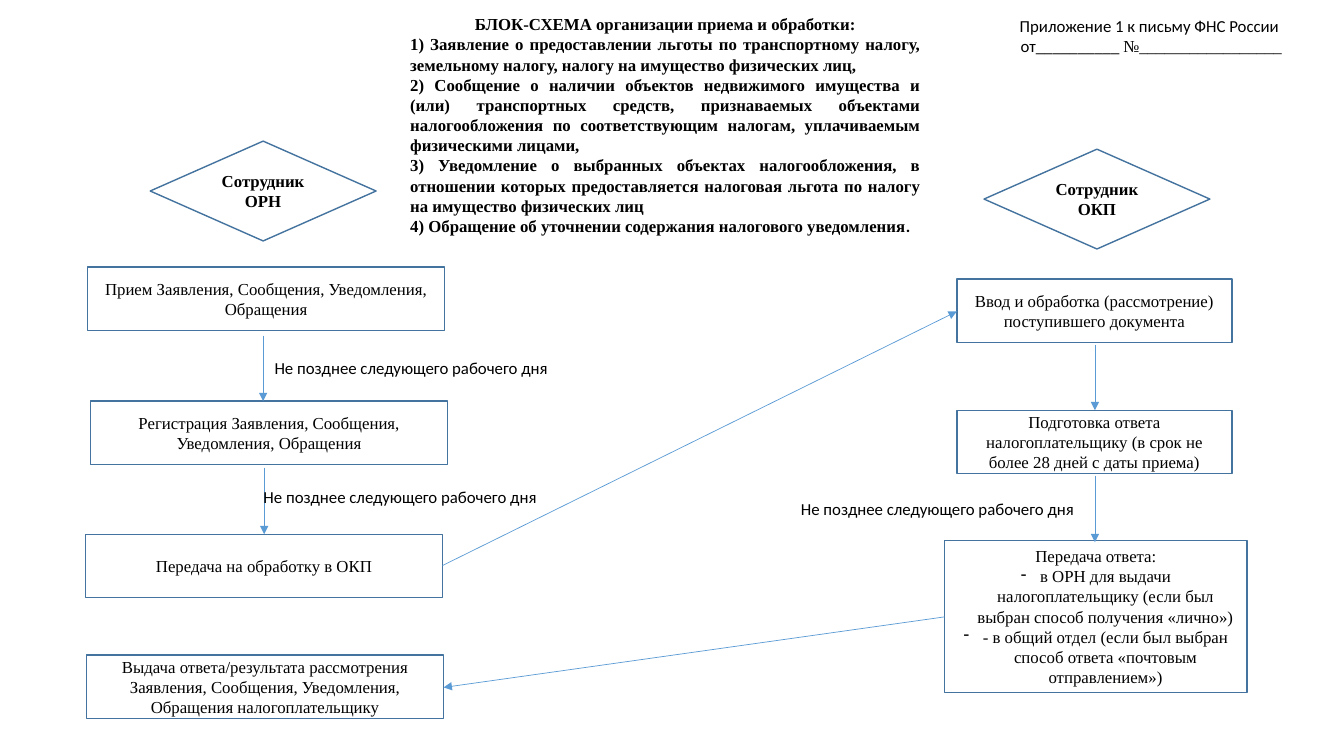
from lxml import etree
from pptx import Presentation
from pptx.dml.color import RGBColor
from pptx.enum.shapes import MSO_CONNECTOR, MSO_SHAPE
from pptx.enum.text import MSO_ANCHOR, PP_ALIGN
from pptx.oxml.ns import qn
from pptx.util import Emu, Pt

PX = 9144  # one hundredth of an inch
RECT, RHOMB = MSO_SHAPE.RECTANGLE, MSO_SHAPE.DIAMOND
STRAIGHT = MSO_CONNECTOR.STRAIGHT
MIDDLE, TOP = MSO_ANCHOR.MIDDLE, MSO_ANCHOR.TOP
CENTER, JUSTIFY = PP_ALIGN.CENTER, PP_ALIGN.JUSTIFY
SERIF, SANS = "Times New Roman", "Calibri"
INK, EDGE, ARROW, WHITE = "000000", "43739E", "5B9BD5", "FFFFFF"

STEPS = [
    ((87, 265, 354, 63), "Прием Заявления, Сообщения, Уведомления, Обращения"),
    ((90, 398, 354, 63), "Регистрация Заявления, Сообщения, Уведомления, Обращения"),
    ((85, 530, 354, 63), "Передача на обработку в ОКП"),
    ((86, 650, 354, 63), "Выдача ответа/результата рассмотрения Заявления, Сообщения, "
                         "Уведомления, Обращения налогоплательщику"),
    ((949, 277, 273, 63), "Ввод и обработка (рассмотрение) поступившего документа"),
    ((949, 407, 273, 63), "Подготовка ответа налогоплательщику "
                          "(в срок не более 28 дней с даты приема)"),
]
REPLY = [
    "Передача ответа:",
    "в ОРН для выдачи налогоплательщику (если был выбран способ получения «лично»)",
    "- в общий отдел (если был выбран способ ответа «почтовым отправлением»)",
]
ROLES = [((149, 140), "Сотрудник ОРН"), ((976, 148), "Сотрудник ОКП")]
ARROWS = [
    (261, 333, 261, 398),
    (262, 464, 262, 530),
    (439, 561, 949, 309),
    (1086, 342, 1086, 407),
    (1086, 472, 1086, 538),
    (937, 612, 440, 682),
]
TERM = "Не позднее следующего рабочего дня"
TERMS = [(188, 350), (177, 478), (710, 490)]
TITLE = [
    "БЛОК-СХЕМА организации приема и обработки:",
    "1) Заявление о предоставлении льготы по транспортному налогу, "
    "земельному налогу, налогу на имущество физических лиц, ",
    "2) Сообщение о наличии объектов недвижимого имущества и (или) "
    "транспортных средств, признаваемых объектами налогообложения по "
    "соответствующим налогам, уплачиваемым физическими лицами, ",
    "3) Уведомление о выбранных объектах налогообложения, в отношении "
    "которых предоставляется налоговая льгота по налогу на имущество физических лиц",
    "4) Обращение об уточнении содержания налогового уведомления",
]
ANNEX = ["Приложение 1 к письму ФНС России ", "от__________ "]


def rgb(code):
    return RGBColor.from_string(code)


def px(*nums):
    return [Emu(num * PX) for num in nums]


def add_run(para, text, face, bold=False):
    run = para.add_run()
    run.text = text
    for key, val in {"name": face, "size": Pt(12), "bold": bold}.items():
        setattr(run.font, key, val)
    run.font.color.rgb = rgb(INK)


def add_dash(para):
    props = para._p.get_or_add_pPr()
    props.set("marL", str(19 * PX))
    props.set("indent", str(-19 * PX))
    etree.SubElement(props, qn("a:buChar")).set("char", "-")


def write(shape, lines, face, bold=False, rest=CENTER, anchor=MIDDLE):
    """Fill the shape with lines; rest aligns all but the first one."""
    frame = shape.text_frame
    for key, val in {"word_wrap": True, "vertical_anchor": anchor}.items():
        setattr(frame, key, val)
    for pos, line in enumerate(lines):
        para = frame.add_paragraph() if pos else frame.paragraphs[0]
        para.alignment = rest if pos else CENTER
        add_run(para, line, face, bold)
    return frame.paragraphs


def add_box(slide, kind, place, lines, bold=False, fill=None):
    shape = slide.shapes.add_shape(kind, *px(*place))
    shape.shadow.inherit = False
    if fill:
        shape.fill.solid()
        shape.fill.fore_color.rgb = rgb(fill)
    else:
        shape.fill.background()
    shape.line.color.rgb = rgb(EDGE)
    shape.line.width = Pt(1)
    return write(shape, lines, SERIF, bold)


def add_note(slide, place, lines, face=SANS, bold=False, rest=CENTER):
    box = slide.shapes.add_textbox(*px(*place))
    return write(box, lines, face, bold, rest, TOP)


def add_arrow(slide, ends):
    link = slide.shapes.add_connector(STRAIGHT, *px(*ends))
    link.line.color.rgb = rgb(ARROW)
    link.line.width = Pt(0.5)
    etree.SubElement(link.line._get_or_add_ln(), qn("a:tailEnd")).set("type", "triangle")
    etree.SubElement(link._element.spPr, qn("a:effectLst"))


def main():
    deck = Presentation()
    deck.slide_width, deck.slide_height = px(1333, 750)
    slide = deck.slides.add_slide(deck.slide_layouts[6])

    for place, text in STEPS:
        add_box(slide, RECT, place, [text])
    for para in add_box(slide, RECT, (937, 536, 300, 151), REPLY)[1:]:
        add_dash(para)
    for spot, text in ROLES:
        add_box(slide, RHOMB, (*spot, 224, 99), [text], True, WHITE)
    for ends in ARROWS:
        add_arrow(slide, ends)

    title = add_note(slide, (397, 9, 526, 232), TITLE, SERIF, True, JUSTIFY)
    add_run(title[-1], ".", SANS, True)
    for spot in TERMS:
        add_note(slide, (*spot, 440, 30), [TERM])
    annex = add_note(slide, (922, 11, 440, 50), ANNEX)
    add_run(annex[-1], "№_________________", SERIF)

    deck.save("out.pptx")


if __name__ == "__main__":
    main()
